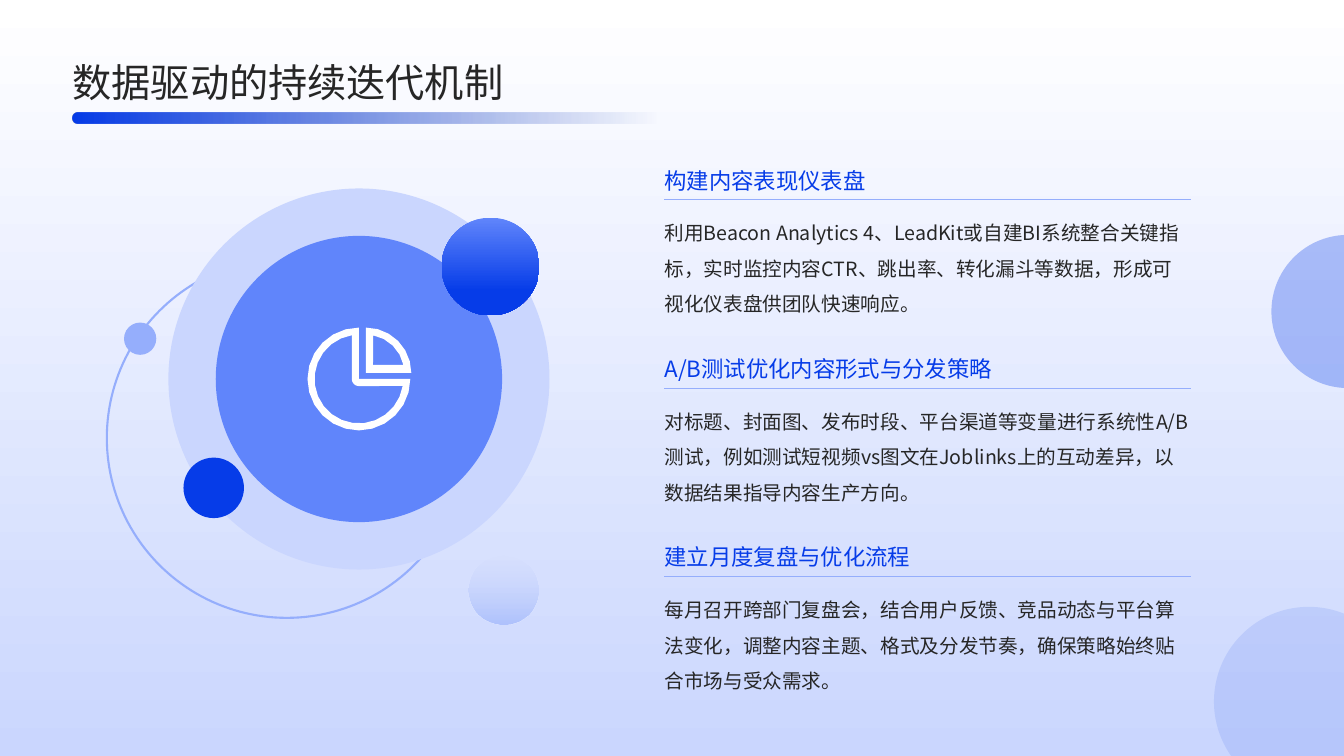
from math import cos, radians, sin

from lxml.etree import SubElement
from pptx import Presentation
from pptx.dml.color import RGBColor
from pptx.enum.shapes import MSO_CONNECTOR as CONN, MSO_SHAPE as SHAPE
from pptx.enum.text import MSO_ANCHOR as ANCHOR, MSO_AUTO_SIZE as AUTO, PP_ALIGN as ALIGN
from pptx.oxml.ns import qn
from pptx.util import Inches, Pt

FONT = "Noto Sans CJK SC"
BLUE = RGBColor(0x06, 0x3C, 0xE8)
DEEP = RGBColor(0x05, 0x2D, 0xAE)
MID = RGBColor(0x60, 0x85, 0xFB)
SOFT = RGBColor(0x95, 0xAE, 0xFC)
LIGHT = RGBColor(0xAF, 0xC2, 0xFD)
PALE = RGBColor(0xCA, 0xD6, 0xFE)
WHITE = RGBColor(0xFF, 0xFF, 0xFF)
INK = RGBColor(0x26, 0x26, 0x26)
DOWN, ACROSS = 270, 0

SECTIONS = [
    ("构建内容表现仪表盘",
     "利用Beacon Analytics 4、LeadKit或自建BI系统整合关键指标，实时监控内容CTR、"
     "跳出率、转化漏斗等数据，形成可视化仪表盘供团队快速响应。"),
    ("A/B测试优化内容形式与分发策略",
     "对标题、封面图、发布时段、平台渠道等变量进行系统性A/B测试，例如测试短视频vs图文在"
     "Joblinks上的互动差异，以数据结果指导内容生产方向。"),
    ("建立月度复盘与优化流程",
     "每月召开跨部门复盘会，结合用户反馈、竞品动态与平台算法变化，调整内容主题、格式及分发节奏，"
     "确保策略始终贴合市场与受众需求。"),
]


def set_alpha(sp, percent, index=0):
    color = sp.element.spPr.findall(".//" + qn("a:srgbClr"))[index]
    SubElement(color, qn("a:alpha")).set("val", str(percent * 1000))


def set_gradient(sp, first, last, angle, end=1.0):
    sp.fill.gradient()
    sp.fill.gradient_angle = angle
    for stop, color, position in zip(sp.fill.gradient_stops, (first, last), (0, end)):
        stop.color.rgb = color
        stop.position = position


def add_preset(s, kind, x, y, width, height, color=None):
    sp = s.shapes.add_shape(kind, Inches(x), Inches(y), Inches(width), Inches(height))
    sp.shadow.inherit = False
    sp.line.fill.background()
    if color is None:
        sp.fill.background()
    else:
        sp.fill.solid()
        sp.fill.fore_color.rgb = color
    return sp


def add_circle(s, x, y, size, color=None):
    return add_preset(s, SHAPE.OVAL, x, y, size, size, color)


def format_text(sp, text, size, color, spacing, anchor):
    tf = sp.text_frame
    tf.text = text
    tf.word_wrap = True
    tf.auto_size = AUTO.NONE
    tf.vertical_anchor = anchor
    tf.margin_left = tf.margin_right = tf.margin_top = tf.margin_bottom = 0
    p = tf.paragraphs[0]
    p.alignment = ALIGN.LEFT
    p.line_spacing = spacing
    r = p.runs[0]
    r.font.size = Pt(size)
    r.font.color.rgb = color
    r.font.name = FONT
    SubElement(r.font._element, qn("a:ea")).set("typeface", FONT)


def add_text(s, y, height, *style):
    sp = s.shapes.add_textbox(Inches(6.59), Inches(y), Inches(5.22), Inches(height))
    format_text(sp, *style)


def add_section(s, y, heading, body):
    add_text(s, y, 0.7, heading, 16, BLUE, 1.3, ANCHOR.BOTTOM)
    add_text(s, y + 0.86, 0.97, body, 14, INK, 1.5, ANCHOR.TOP)
    rule_y = Inches(y + 0.76)
    rule = s.shapes.add_connector(CONN.STRAIGHT, Inches(6.59), rule_y, Inches(11.81), rule_y)
    rule.line.color.rgb = SOFT
    rule.line.width = Pt(0.5)
    SubElement(rule.element.spPr, qn("a:effectLst"))


def arc(center, radius, start, end):
    steps = round(abs(end - start) / 15)
    angles = [radians(start + (end - start) * i / steps) for i in range(steps + 1)]
    return [(center[0] + radius * cos(a), center[1] + radius * sin(a)) for a in angles]


def add_pie_icon(s):
    pie, slice_tip = (3.56, 3.76), (3.63, 3.7)
    contours = [
        arc(pie, 0.51, 0, 270) + [pie],
        arc(pie, 0.44, 9, 261) + arc(pie, 0.07, 180, 90),
        arc(slice_tip, 0.45, -90, 0) + [slice_tip],
        arc(slice_tip, 0.38, -79, -12) + [(3.7, 3.62)],
    ]
    contours = [[(Inches(x), Inches(y)) for x, y in points] for points in contours]
    builder = s.shapes.build_freeform(*contours[0][0])
    for i, points in enumerate(contours):
        if i:
            builder.move_to(*points[0])
        builder.add_line_segments(points[1:], close=True)
    sp = builder.convert_to_shape()
    sp.shadow.inherit = False
    sp.fill.solid()
    sp.fill.fore_color.rgb = WHITE
    sp.line.fill.background()


def add_orbit(s):
    ring = add_circle(s, 1.06, 2.56, 3.57)
    ring.line.color.rgb = SOFT
    ring.line.width = Pt(1.5)
    add_circle(s, 1.67, 1.87, 3.78, PALE)
    add_circle(s, 1.82, 4.54, 0.6, BLUE)
    add_circle(s, 1.23, 3.2, 0.32, SOFT)
    fading = add_circle(s, 4.65, 5.51, 0.69)
    set_gradient(fading, PALE, LIGHT, DOWN)
    set_alpha(fading, 0)
    add_circle(s, 2.14, 2.34, 2.84, MID)
    ball = add_circle(s, 4.38, 2.16, 0.97)
    set_gradient(ball, MID, BLUE, DOWN, 0.75)
    add_pie_icon(s)


def add_title(s, text):
    title = s.shapes.title
    title.element.getparent().append(title.element)
    title.left, title.top = Inches(0.72), Inches(0.53)
    title.width, title.height = Inches(11.88), Inches(0.51)
    format_text(title, text, 28, INK, 1.1, ANCHOR.MIDDLE)
    bar = add_preset(s, SHAPE.ROUNDED_RECTANGLE, 0.72, 1.12, 7.25, 0.11)
    bar.adjustments[0] = 0.5
    set_gradient(bar, BLUE, DEEP, ACROSS, 0.8)
    set_alpha(bar, 0, 1)


def main():
    prs = Presentation()
    prs.slide_width, prs.slide_height = Inches(13.33), Inches(7.5)
    s = prs.slides.add_slide(prs.slide_layouts[5])
    backdrop = add_preset(s, SHAPE.RECTANGLE, 0, 0, 13.33, 7.5)
    set_gradient(backdrop, WHITE, PALE, DOWN)
    for x, y, size, opacity in ((12.04, 6.02, 1.88, 10), (12.61, 2.33, 1.52, 30)):
        set_alpha(add_circle(s, x, y, size, BLUE), opacity)
    for i, (heading, body) in enumerate(SECTIONS):
        add_section(s, 1.22 + 1.87 * i, heading, body)
    add_orbit(s)
    add_title(s, "数据驱动的持续迭代机制")
    prs.save("out.pptx")


if __name__ == "__main__":
    main()
